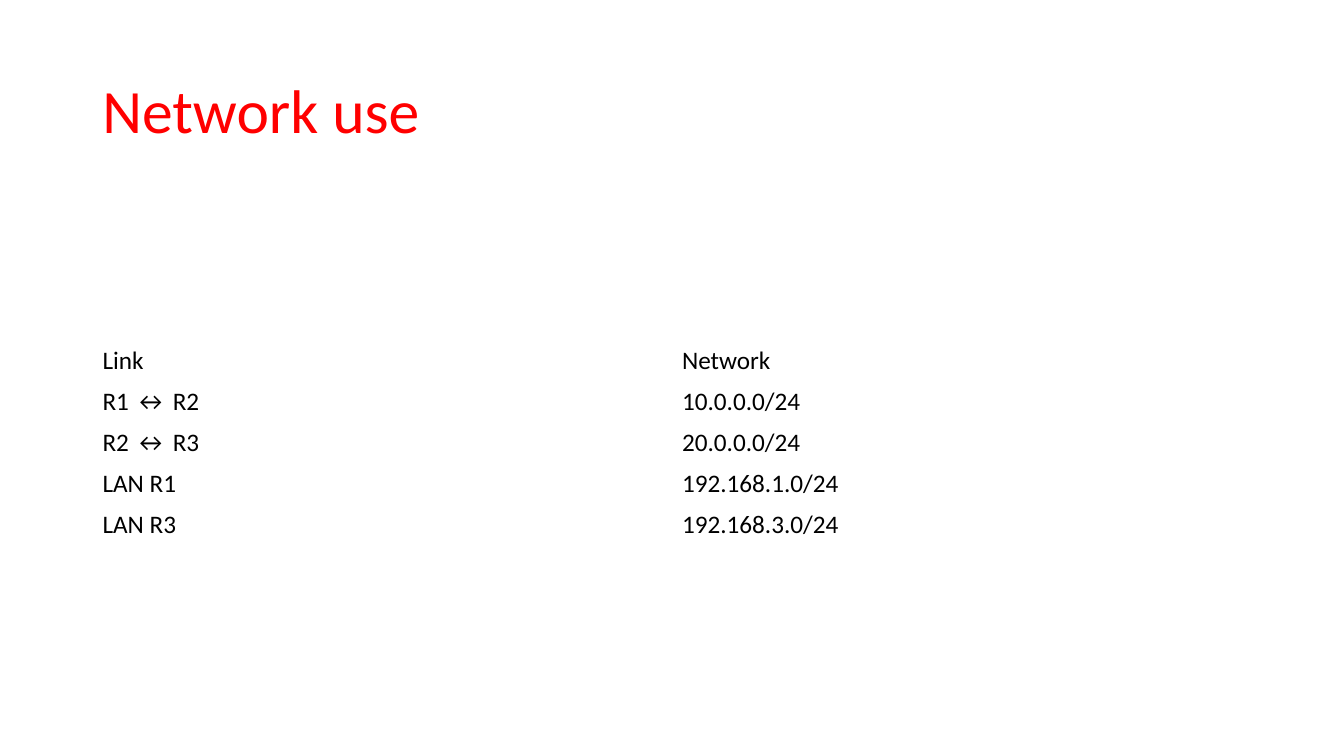
from pptx import Presentation, util as u
from pptx.dml.color import RGBColor
from pptx.enum import text

Cm = u.Cm
HUES = {"title": "FF0000", "body": "000000"}
ROWS = [
    ("Link", "Network"),
    ("R1 ↔ R2", "10.0.0.0/24"),
    ("R2 ↔ R3", "20.0.0.0/24"),
    ("LAN R1", "192.168.1.0/24"),
    ("LAN R3", "192.168.3.0/24"),
]


def write(frame, words, size=18, hue="body", lead=None):
    par = frame.paragraphs[0]
    par.line_spacing = lead
    run = par.add_run()
    run.text = words
    font = run.font
    font.name, font.size, font.bold = "Calibri", u.Pt(size), False
    font.color.rgb = RGBColor.from_string(HUES[hue])


def add_title(slide, x, y, w, h):
    frame = slide.shapes.add_textbox(Cm(x), Cm(y), Cm(w), Cm(h)).text_frame
    frame.word_wrap = True
    frame.vertical_anchor = text.MSO_ANCHOR.MIDDLE
    write(frame, "Network use", size=44, hue="title", lead=0.9)


def add_links(slide, x, y, w, h):
    grid = slide.shapes.add_table(
        len(ROWS), len(ROWS[0]), Cm(x), Cm(y), Cm(w), Cm(h)).table
    grid.first_row = grid.horz_banding = False
    for r, row in enumerate(ROWS):
        for c, words in enumerate(row):
            cell = grid.cell(r, c)
            cell.fill.background()
            cell.vertical_anchor = text.MSO_ANCHOR.MIDDLE
            write(cell.text_frame, words)


def main():
    deck = Presentation()
    deck.slide_width, deck.slide_height = Cm(33.87), Cm(19.05)
    slide = deck.slides.add_slide(deck.slide_layouts[6])
    left, wide = 2.33, 29.21

    # Heading
    add_title(slide, left, 1.01, wide, 3.68)

    # Table of links and their networks
    add_links(slide, left, 8.59, wide, 5.15)

    deck.save("out.pptx")


if __name__ == "__main__":
    main()
